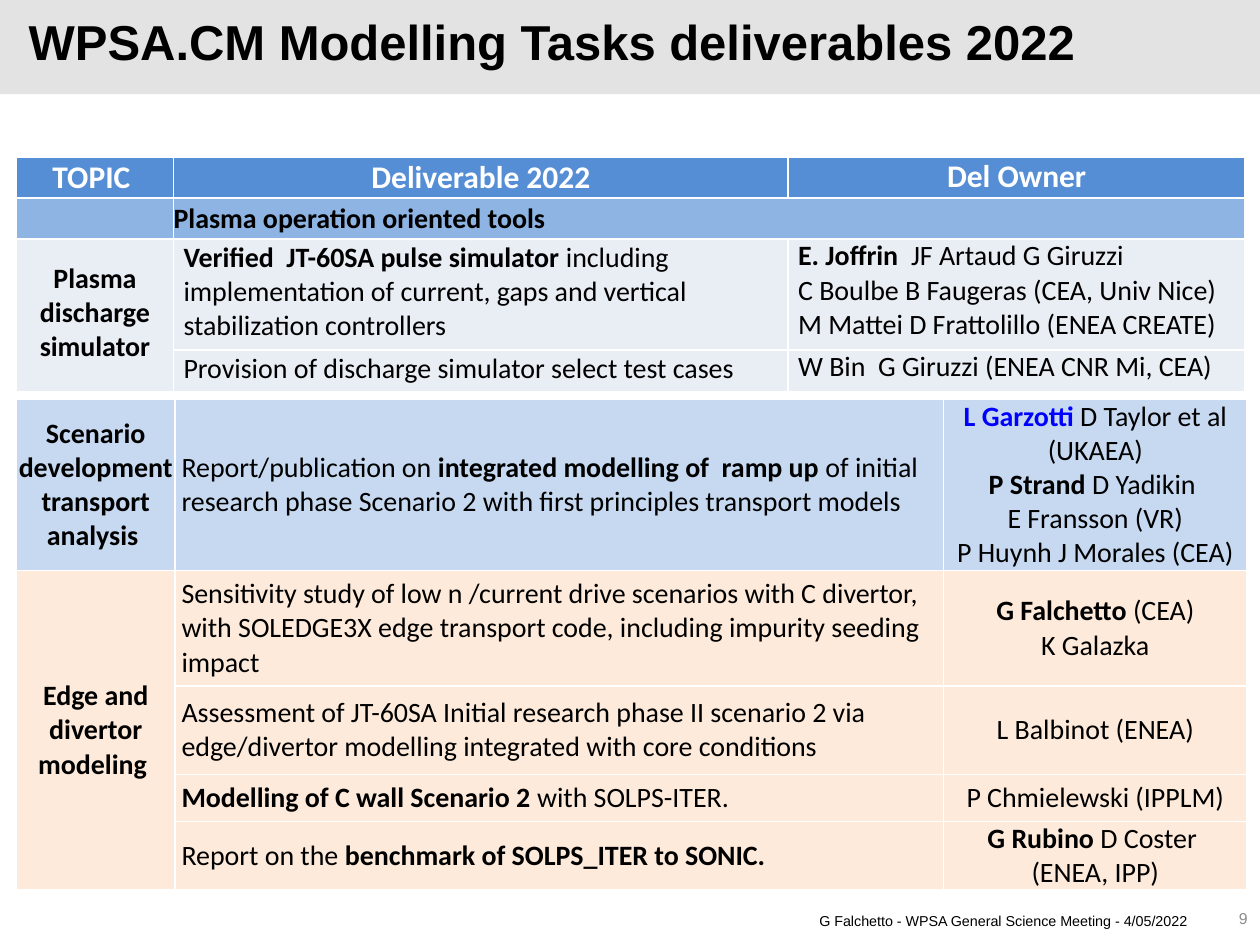
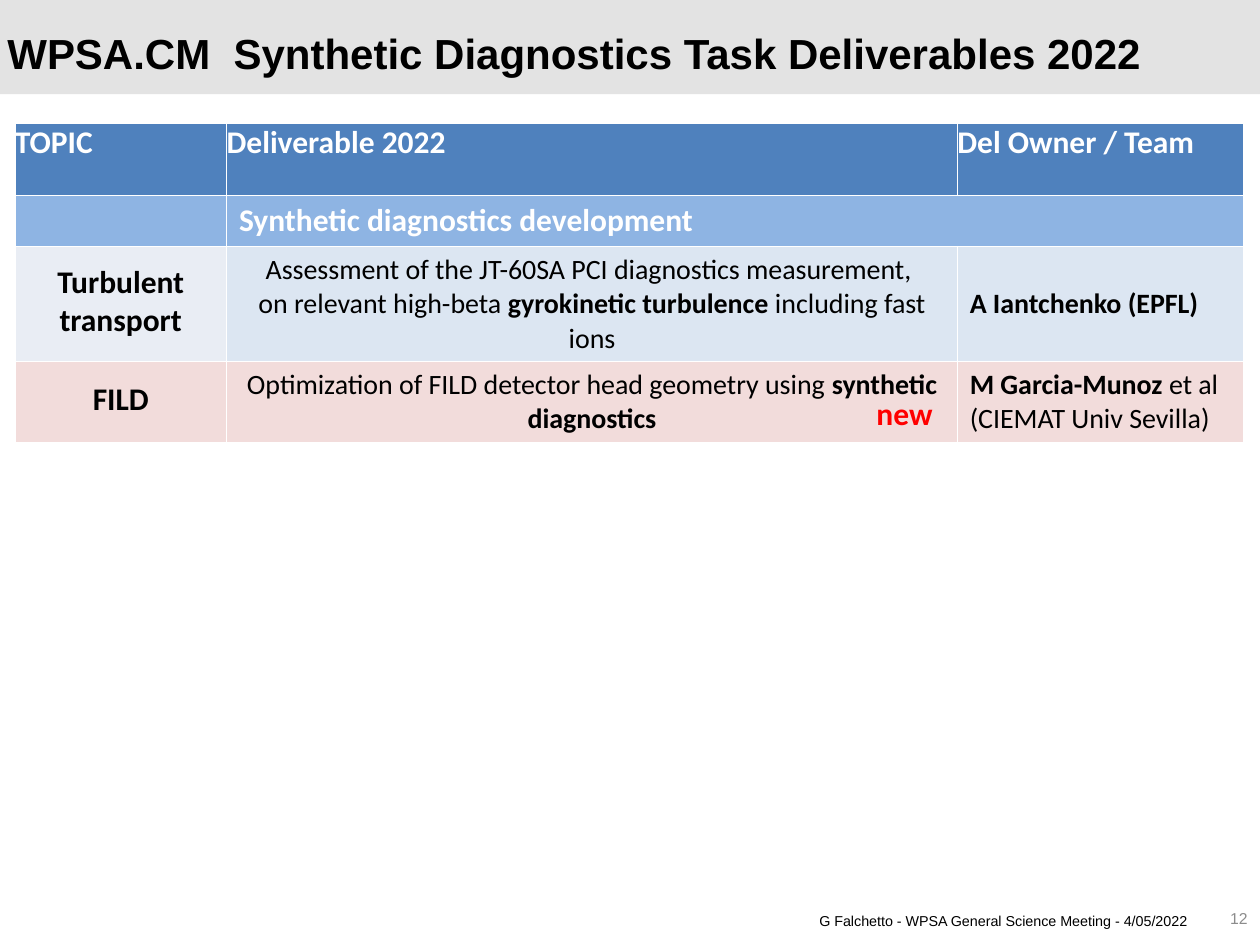
from pptx import Presentation
from pptx.dml.color import RGBColor as Rgb
from pptx.enum.shapes import MSO_SHAPE as Shape
from pptx.enum.text import MSO_ANCHOR as Anchor, PP_ALIGN as Align
from pptx.util import Cm, Pt
from dataclasses import dataclass


@dataclass(frozen=True)
class Theme:
    band: str = "E3E3E3"
    ink: str = "000000"
    white: str = "FFFFFF"
    grey: str = "8C8C8C"
    blue: str = "0000FF"
    red: str = "FF0000"
    head: str = "558ED5"
    deep: str = "4F81BD"
    sub: str = "8EB4E3"
    pale: str = "E9EDF4"
    sky: str = "C6D9F1"
    ice: str = "DCE6F2"
    peach: str = "FDEADA"
    rose: str = "F2DCDB"
    sans: str = "Arial"
    body: str = "Calibri"
    big: float = 18
    mid: float = 16
    foot: float = 8.2
    num: float = 9


T = Theme()
MID = Anchor.MIDDLE
CENTER = Align.CENTER
NONE = (0, 0, 0, 0)
EVEN = (0.13, 0.13, 0.13, 0.13)
WIDE = (0.25, 0.13, 0.25, 0.13)
SLIM = (0.03, 0.03, 0.03, 0.13)
SIDE = (0.2, 0.03, 0.2, 0.13)
LEFT = (0.2, 0, 0, 0)

LOOKS = {
    "head": dict(size=T.big, color=T.white, bold=True, align=CENTER, anchor=MID),
    "owner": dict(size=T.big, color=T.white, bold=True, align=CENTER),
    "plain": dict(size=T.big, color=T.white, bold=True),
    "sub": dict(bold=True, anchor=MID),
    "light": dict(size=T.big, color=T.white, bold=True, anchor=MID, pad=WIDE),
    "topic": dict(bold=True, align=CENTER, anchor=MID),
    "slim": dict(bold=True, align=CENTER, anchor=MID, pad=SLIM),
    "large": dict(size=T.big, bold=True, align=CENTER, anchor=MID, pad=SLIM),
    "task": dict(anchor=MID, pad=EVEN),
    "tool": dict(anchor=MID, pad=SIDE),
    "team": dict(align=CENTER, anchor=MID),
    "crew": dict(pad=LEFT),
    "mid": dict(align=CENTER, anchor=MID, pad=WIDE),
    "top": dict(align=CENTER, pad=WIDE),
    "name": dict(anchor=MID, pad=WIDE),
    "names": dict(pad=WIDE),
}

FOOTER = "G Falchetto - WPSA General Science Meeting - 4/05/2022"

TOOLS = dict(
    at=(0.33, 3.18), cols=(3.17, 12.39, 9.21),
    merge=[(1, 1, 1, 2), (2, 0, 3, 0)],
    rows=[
        (0.81, T.head, [("TOPIC ", "head"), ("Deliverable 2022", "head"),
                        ("Del Owner", "owner")]),
        (0.83, T.sub, [None, ("Plasma operation oriented tools", "sub"), None]),
        (2.21, T.pale, [
            ("Plasma discharge simulator", "slim"),
            ("*Verified  JT-60SA pulse simulator *including implementation of "
             "current, gaps and vertical stabilization controllers", "tool"),
            ("*E. Joffrin  *JF Artaud G Giruzzi\n"
             "C Boulbe B Faugeras (CEA, Univ Nice)\n"
             "M Mattei D Frattolillo (ENEA CREATE)", "crew")]),
        (0.83, T.pale, [
            None,
            ("Provision of discharge simulator select test cases", "tool"),
            ("W Bin  G Giruzzi (ENEA CNR Mi, CEA)", "crew")]),
    ])

MODELS = dict(
    at=(0.33, 8.05), cols=(3.2, 15.49, 6.12),
    merge=[(1, 0, 4, 0)],
    rows=[
        (3.42, T.sky, [
            ("Scenario development transport analysis ", "topic"),
            ("Report/publication on *integrated modelling of  ramp up *of initial "
             "research phase Scenario 2 with first principles transport models",
             "task"),
            ("*^L Garzotti *D Taylor et al (UKAEA)\n*P Strand* D Yadikin \n"
             "E Fransson (VR)\nP Huynh J Morales (CEA)", "team")]),
        (2.32, T.peach, [
            ("Edge and divertor modeling ", "topic"),
            ("Sensitivity study of low n /current drive scenarios with C divertor,  "
             "with SOLEDGE3X edge transport code, including impurity seeding \n"
             "impact", "task"),
            ("*G Falchetto *(CEA)\nK Galazka", "team")]),
        (1.78, T.peach, [
            None,
            ("Assessment of JT-60SA Initial research phase II scenario 2 via "
             "edge/divertor modelling integrated with core conditions", "task"),
            ("L Balbinot (ENEA)", "team")]),
        (0.95, T.peach, [
            None,
            ("*Modelling of C wall Scenario 2 *with SOLPS-ITER.", "task"),
            ("P Chmielewski (IPPLM)", "team")]),
        (1.37, T.peach, [
            None,
            ("Report on the *benchmark of SOLPS_ITER to SONIC.*", "task"),
            ("*G Rubino *D Coster \n(ENEA, IPP)", "team")]),
    ])

DIAGS = dict(
    at=(0.3, 2.49), cols=(4.27, 14.73, 5.77),
    merge=[(1, 1, 1, 2)],
    rows=[
        (1.45, T.deep, [("TOPIC", "plain"), ("Deliverable 2022", "plain"),
                        ("Del Owner / Team", "plain")]),
        (1.03, T.sub, [None, ("Synthetic diagnostics development", "light"), None]),
        (2.32, (T.pale, T.ice, T.ice), [
            ("Turbulent transport", "large"),
            ("Assessment of the JT-60SA PCI diagnostics measurement, \n"
             "on relevant high-beta *gyrokinetic turbulence *including fast ions",
             "mid"),
            ("*A Iantchenko (EPFL)*", "name")]),
        (1.63, T.rose, [
            ("FILD", "large"),
            ("Optimization of FILD detector head geometry using "
             "*synthetic diagnostics*", "top"),
            ("*M Garcia-Munoz *et al\n(CIEMAT Univ Sevilla)", "names")]),
    ])

SLIDES = [
    dict(title="WPSA.CM Modelling Tasks deliverables 2022", size=28,
         box=(0.33, 0.36, 22.3, 1.27), num="9", grids=[MODELS, TOOLS], tags=[]),
    dict(title="WPSA.CM  Synthetic Diagnostics Task Deliverables 2022", size=24,
         box=(-0.1, 0.51, 23.42, 1.27), num="12", grids=[DIAGS],
         tags=[("new", (17.42, 7.82, 1.65, 1.02))]),
]


def paint(obj, color):
    obj.fill.solid()
    obj.fill.fore_color.rgb = Rgb.from_string(color)


def write(frame, text, size=T.mid, color=T.ink, bold=False, font=T.body,
          align=Align.LEFT, lead=None):
    for i, line in enumerate(text.split("\n")):
        para = frame.add_paragraph() if i else frame.paragraphs[0]
        para.alignment = align
        if lead:
            para.line_spacing = Pt(lead)
        for j, part in enumerate(line.split("*")):
            if not part:
                continue
            run = para.add_run()
            run.text = part.lstrip("^")
            run.font.name = font
            run.font.size = Pt(size)
            run.font.bold = bold or j % 2 == 1
            tint = T.blue if part.startswith("^") else color
            run.font.color.rgb = Rgb.from_string(tint)


def label(slide, text, box, wrap=True, anchor=MID, **form):
    frame = slide.shapes.add_textbox(*map(Cm, box)).text_frame
    frame.word_wrap = wrap
    frame.vertical_anchor = anchor
    write(frame, text, **form)


def fill_cell(cell, item, color):
    paint(cell, color)
    text, look = item or ("", "sub")
    form = dict(LOOKS[look])
    pad = form.pop("pad", NONE)
    cell.vertical_anchor = form.pop("anchor", Anchor.TOP)
    (cell.margin_left, cell.margin_top,
     cell.margin_right, cell.margin_bottom) = map(Cm, pad)
    write(cell.text_frame, text, **form)


def add_grid(slide, grid):
    cols, rows = grid["cols"], grid["rows"]
    high = sum(row[0] for row in rows)
    table = slide.shapes.add_table(
        len(rows), len(cols), *map(Cm, (*grid["at"], sum(cols), high))).table
    for col, wide in zip(table.columns, cols):
        col.width = Cm(wide)
    for r, (tall, color, items) in enumerate(rows):
        table.rows[r].height = Cm(tall)
        tints = [color] * len(cols) if isinstance(color, str) else color
        for c, item in enumerate(items):
            fill_cell(table.cell(r, c), item, tints[c])
    for top, left, low, right in grid["merge"]:
        table.cell(top, left).merge(table.cell(low, right))


def build(deck, page):
    slide = deck.slides.add_slide(deck.slide_layouts[6])
    band = slide.shapes.add_shape(
        Shape.RECTANGLE, 0, 0, deck.slide_width, Cm(1.9))
    band.shadow.inherit = False
    paint(band, T.band)
    band.line.fill.background()
    for grid in page["grids"]:
        add_grid(slide, grid)
    label(slide, FOOTER, (1.3, 18.19, 22.89, 0.74),
          size=T.foot, font=T.sans, align=Align.RIGHT)
    label(slide, page["num"], (23.67, 18.01, 1.73, 1.02),
          size=T.num, font=T.sans, color=T.grey, align=Align.RIGHT)
    for text, box in page["tags"]:
        label(slide, text, box, wrap=False, anchor=Anchor.TOP,
              size=T.big, color=T.red, bold=True)
    label(slide, page["title"], page["box"],
          size=page["size"], font=T.sans, bold=True, lead=24)


def main():
    deck = Presentation()
    deck.slide_width, deck.slide_height = Cm(25.4), Cm(19.05)
    for page in SLIDES:
        build(deck, page)
    deck.save("out.pptx")


if __name__ == "__main__":
    main()
